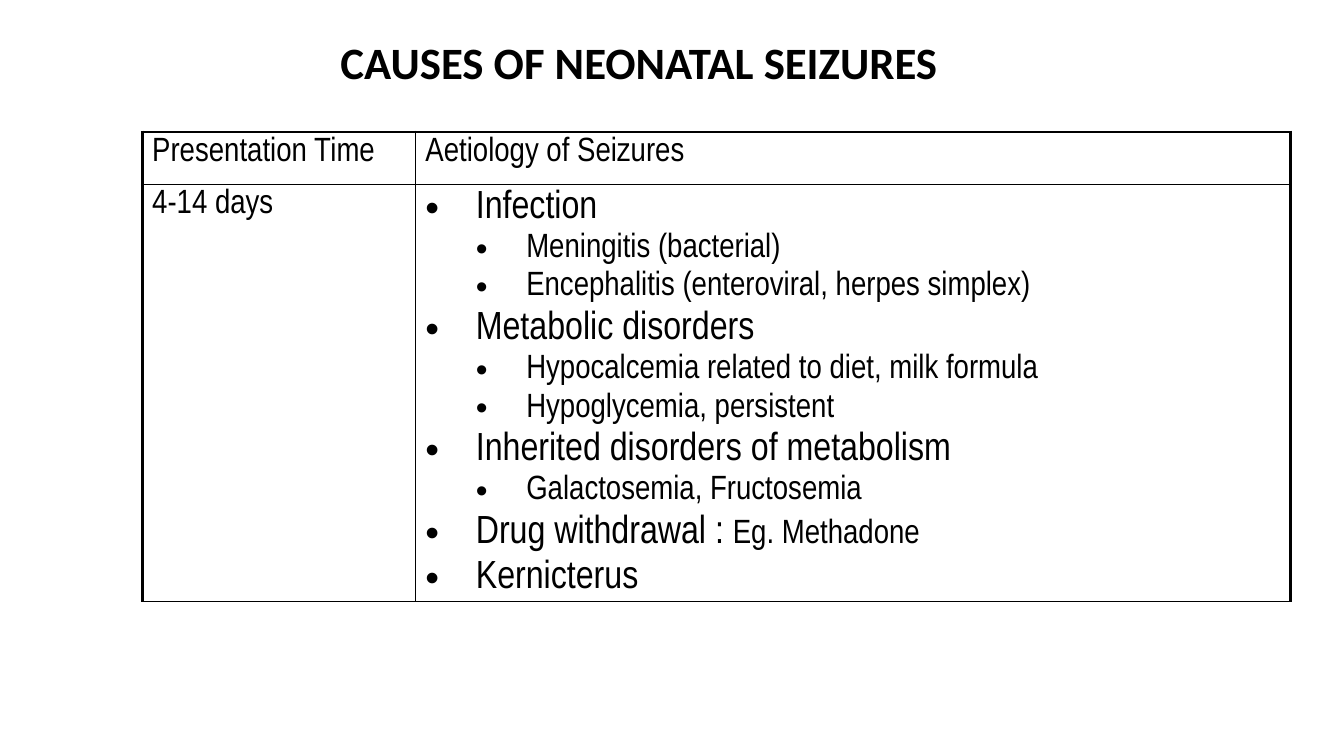
from lxml.etree import SubElement
from pptx import Presentation
from pptx.dml.color import RGBColor
from pptx.enum.text import MSO_ANCHOR, MSO_AUTO_SIZE, PP_ALIGN
from pptx.oxml.ns import qn
from pptx.util import Inches, Pt

BLACK = "000000"
THICK, THIN = 2.25, 1
COLUMN_WIDTHS = [2.71, 8.68]
ROW_HEIGHTS = [0.52, 4.14]
CAUSES = [
    (0, ["Infection"]),
    (1, ["Meningitis (bacterial)"]),
    (1, ["Encephalitis (enteroviral, herpes simplex)"]),
    (0, ["Metabolic disorders"]),
    (1, ["Hypocalcemia related to diet, milk formula"]),
    (1, ["Hypoglycemia, persistent"]),
    (0, ["Inherited disorders of metabolism"]),
    (1, ["Galactosemia, Fructosemia"]),
    (0, ["Drug withdrawal : ", "Eg. Methadone"]),
    (0, ["Kernicterus"]),
]
ROWS = [
    [[(None, ["Presentation Time"])], [(None, ["Aetiology of Seizures"])]],
    [[(None, ["4-14 days"])], CAUSES],
]


def set_font(font, name, size, color=BLACK, bold=False):
    font.name = name
    font.size = Pt(size)
    font.bold = bold
    font.color.rgb = RGBColor.from_string(color)


def add_bullet(paragraph, level):
    paragraph.level = level
    properties = paragraph._p.get_or_add_pPr()
    properties.set("marL", str(Inches(0.5 * (level + 1))))
    properties.set("indent", str(Inches(-0.5)))
    SubElement(properties, qn("a:buFont"), typeface="Arial")
    SubElement(properties, qn("a:buChar"), char="•")


def set_borders(cell, widths, color=BLACK):
    """Draw the cell's borders; widths are left, right, top, bottom in points."""
    properties = cell._tc.get_or_add_tcPr()
    for side, width in zip("LRTB", widths):
        line = SubElement(properties, qn(f"a:ln{side}"), w=str(Pt(width)))
        fill = SubElement(line, qn("a:solidFill"))
        SubElement(fill, qn("a:srgbClr"), val=color)


def fill_cell(cell, lines):
    """Write lines given as (bullet level or None, run texts)."""
    cell.margin_top = cell.margin_bottom = Inches(0.05)
    frame = cell.text_frame
    for index, (level, texts) in enumerate(lines):
        paragraph = frame.add_paragraph() if index else frame.paragraphs[0]
        size = 28 if level == 0 else 24
        if level is not None:
            add_bullet(paragraph, level)
        if index:
            paragraph.space_before = Pt(0.2 * size)
        set_font(paragraph.font, "Arial Narrow", size)
        for position, text in enumerate(texts):
            run = paragraph.add_run()
            run.text = text
            if position:
                run.font.size = Pt(24)


def add_title(slide, left, top, width, height):
    title = slide.shapes.title
    title.left, title.top = Inches(left), Inches(top)
    title.width, title.height = Inches(width), Inches(height)
    frame = title.text_frame
    frame.text = "CAUSES OF NEONATAL SEIZURES"
    frame.auto_size = MSO_AUTO_SIZE.NONE
    frame.vertical_anchor = MSO_ANCHOR.MIDDLE
    paragraph = frame.paragraphs[0]
    paragraph.alignment = PP_ALIGN.CENTER
    paragraph.line_spacing = 0.9
    set_font(paragraph.font, "Calibri", 32, bold=True)


def add_causes_table(slide, left, top, width, height):
    table = slide.shapes.add_table(
        len(ROWS), len(COLUMN_WIDTHS),
        Inches(left), Inches(top), Inches(width), Inches(height),
    ).table
    table.first_row = table.horz_banding = False
    for column, share in zip(table.columns, COLUMN_WIDTHS):
        column.width = Inches(width * share / sum(COLUMN_WIDTHS))
    for row, share in zip(table.rows, ROW_HEIGHTS):
        row.height = Inches(height * share / sum(ROW_HEIGHTS))
    last_column = len(COLUMN_WIDTHS) - 1
    for row_index, row in enumerate(ROWS):
        for column_index, lines in enumerate(row):
            cell = table.cell(row_index, column_index)
            set_borders(cell, [
                THICK if column_index == 0 else THIN,
                THICK if column_index == last_column else THIN,
                THICK if row_index == 0 else THIN,
                THIN,
            ])
            cell.fill.background()
            fill_cell(cell, lines)


def main():
    presentation = Presentation()
    presentation.slide_width = Inches(13.33)
    presentation.slide_height = Inches(7.5)
    slide = presentation.slides.add_slide(presentation.slide_layouts[5])
    add_title(slide, 0.36, 0.3, 11.96, 0.68)
    add_causes_table(slide, 1.41, 1.31, sum(COLUMN_WIDTHS), sum(ROW_HEIGHTS))
    presentation.save("out.pptx")


if __name__ == "__main__":
    main()
